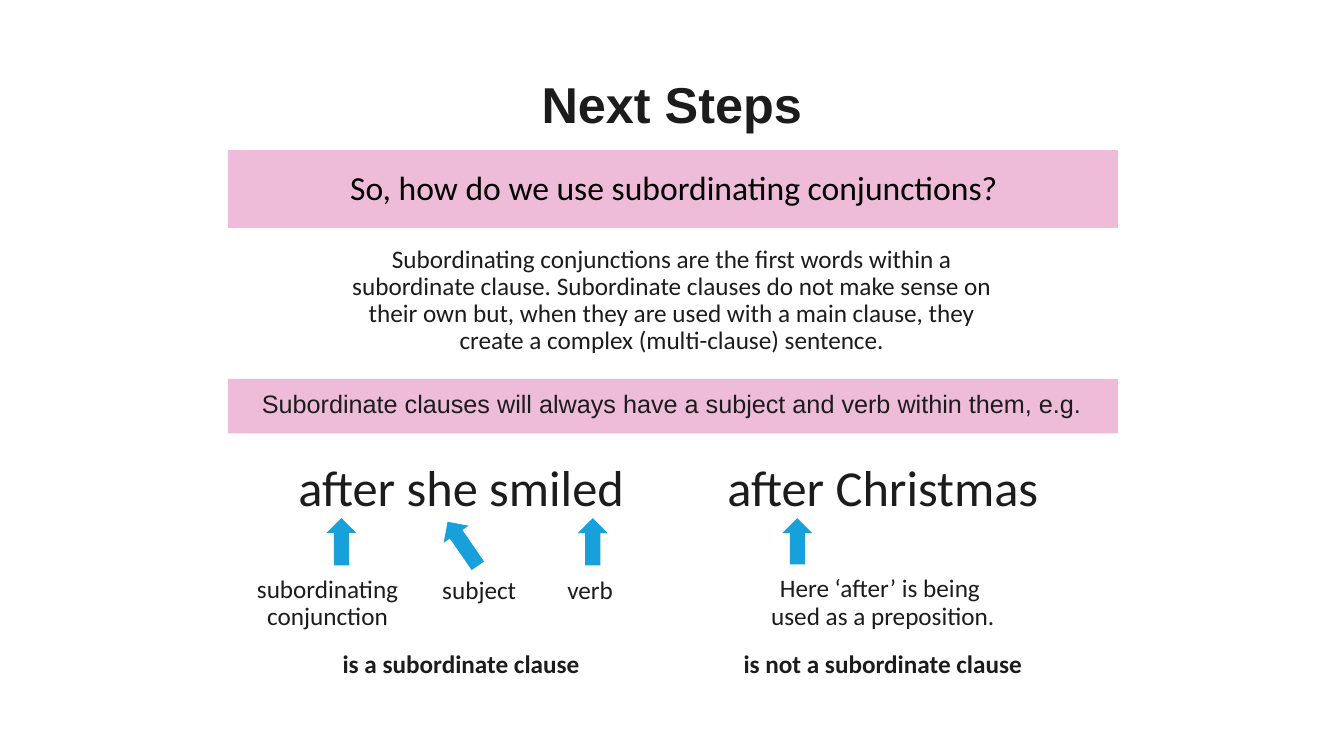
from dataclasses import dataclass

from pptx import Presentation
from pptx.dml.color import RGBColor
from pptx.enum.shapes import MSO_SHAPE as Preset
from pptx.enum.text import MSO_ANCHOR as Anchor, MSO_AUTO_SIZE as AutoSize, PP_ALIGN as Align
from pptx.shapes.autoshape import Shape
from pptx.shapes.shapetree import GroupShapes, SlideShapes
from pptx.text.text import TextFrame
from pptx.util import Inches, Pt

COLORS = {"band": "EEBCD9", "arrow": "18A0DB", "ink": "1C1C1C", "title": "000000"}

# Grid of 40 columns by 30 rows
WIDTH, HEIGHT = Inches(13.33), Inches(7.5)
COLUMN, ROW = WIDTH / 40, HEIGHT / 30

# Shared grid lines
LEFT_CLAUSE, RIGHT_CLAUSE, CLAUSE_WIDTH = 7.47, 20.02, 12.51
BAND_LEFT, BAND_WIDTH = 6.78, 26.49
CORNER = 0.096


@dataclass(frozen=True)
class Box:
    left: float
    top: float
    width: float
    height: float

    def lengths(self) -> tuple[int, int, int, int]:
        return (round(self.left * COLUMN), round(self.top * ROW),
                round(self.width * COLUMN), round(self.height * ROW))


@dataclass(frozen=True)
class Label:
    text: str
    box: Box
    size: int = 18
    font: str = "Calibri"
    bold: bool = False


@dataclass(frozen=True)
class Pointer:
    label: Label
    arrow: Box
    rotation: float = 180


BANDS = [
    Box(BAND_LEFT, 15.04, BAND_WIDTH, 2.16),
    Box(BAND_LEFT, 5.96, BAND_WIDTH, 3.08),
]

LABELS = [
    Label("Next Steps", Box(6.51, 2.08, 26.97, 4.36), 36, "Arial", True),
    Label("Subordinating conjunctions are the first words within a subordinate clause. "
          "Subordinate clauses do not make sense on their own but, when they are used "
          "with a main clause, they create a complex (multi-clause) sentence.",
          Box(9.21, 9.44, 21.57, 5)),
    Label("Subordinate clauses will always have a subject and verb within them, e.g.",
          Box(6.61, 15.28, 26.76, 1.64), font="Arial"),
    Label("after she smiled", Box(LEFT_CLAUSE, 16.96, CLAUSE_WIDTH, 5), 36),
    Label("after Christmas", Box(RIGHT_CLAUSE, 18.28, CLAUSE_WIDTH, 2.32), 36),
    Label("is a subordinate clause", Box(LEFT_CLAUSE, 25.56, CLAUSE_WIDTH, 1.72), bold=True),
    Label("is not a subordinate clause", Box(RIGHT_CLAUSE, 25.56, CLAUSE_WIDTH, 1.72), bold=True),
]

POINTERS = [
    Pointer(Label("verb", Box(15.48, 22.4, 4.17, 2.16)), Box(17.19, 20.56, 0.9, 1.88)),
    Pointer(Label("subject", Box(12.18, 22.4, 4.17, 2.16)), Box(13.32, 20.52, 0.9, 2.12), 145.5),
    Pointer(Label("subordinating conjunction", Box(6.51, 22.88, 6.48, 2.16)),
            Box(9.72, 20.56, 0.88, 1.88)),
    Pointer(Label("Here ‘after’ is being \nused as a preposition.",
                  Box(RIGHT_CLAUSE, 23.08, CLAUSE_WIDTH, 1.72)), Box(23.28, 20.56, 0.9, 1.84)),
]


def write_text(frame: TextFrame, text: str, *, size: int, font: str = "Calibri",
               color: str = "ink", bold: bool = False, inset: float = 0.28) -> None:
    """Fill a frame with one centred paragraph."""
    frame.word_wrap = True
    frame.auto_size = AutoSize.NONE
    frame.vertical_anchor = Anchor.MIDDLE
    frame.margin_left = frame.margin_right = Inches(inset)
    frame.margin_top = frame.margin_bottom = Inches(inset)
    paragraph = frame.paragraphs[0]
    paragraph.text = text
    paragraph.alignment = Align.CENTER
    paragraph.line_spacing = 0.9
    paragraph.space_before = Pt(0)
    for run in paragraph.runs:
        run.font.size = Pt(size)
        run.font.name = font
        run.font.bold = bold
        run.font.color.rgb = RGBColor.from_string(COLORS[color])


def draw_shape(shapes: SlideShapes | GroupShapes, preset: Preset, box: Box,
               color: str | None = None, rotation: float = 0) -> Shape:
    """Draw a shape without outline; without a colour it has no fill either."""
    shape = shapes.add_shape(preset, *box.lengths())
    shape.shadow.inherit = False
    shape.line.fill.background()
    shape.rotation = rotation
    if color is None:
        shape.fill.background()
    else:
        shape.fill.solid()
        shape.fill.fore_color.rgb = RGBColor.from_string(COLORS[color])
    return shape


def draw_label(shapes: SlideShapes | GroupShapes, label: Label) -> None:
    shape = draw_shape(shapes, Preset.ROUNDED_RECTANGLE, label.box)
    shape.adjustments[0] = CORNER
    write_text(shape.text_frame, label.text, size=label.size, font=label.font, bold=label.bold)


def draw_pointer(shapes: SlideShapes, pointer: Pointer) -> None:
    group = shapes.add_group_shape()
    draw_label(group.shapes, pointer.label)
    draw_shape(group.shapes, Preset.DOWN_ARROW, pointer.arrow, "arrow", pointer.rotation)


def main() -> None:
    presentation = Presentation()
    presentation.slide_width, presentation.slide_height = WIDTH, HEIGHT
    slide = presentation.slides.add_slide(presentation.slide_layouts[5])
    shapes = slide.shapes

    # Pink bands
    for band in BANDS:
        draw_shape(shapes, Preset.RECTANGLE, band, "band")

    # Title, brought in front of its band
    title = shapes.title
    title.left, title.top, title.width, title.height = Box(6.69, 6.28, 26.73, 2.52).lengths()
    write_text(title.text_frame, "So, how do we use subordinating conjunctions?",
               size=24, color="title", inset=0.1)
    title.element.getparent().append(title.element)

    # Heading, explanation and example clauses
    for label in LABELS:
        draw_label(shapes, label)

    # Arrows with their captions
    for pointer in POINTERS:
        draw_pointer(shapes, pointer)

    presentation.save("out.pptx")


if __name__ == "__main__":
    main()
